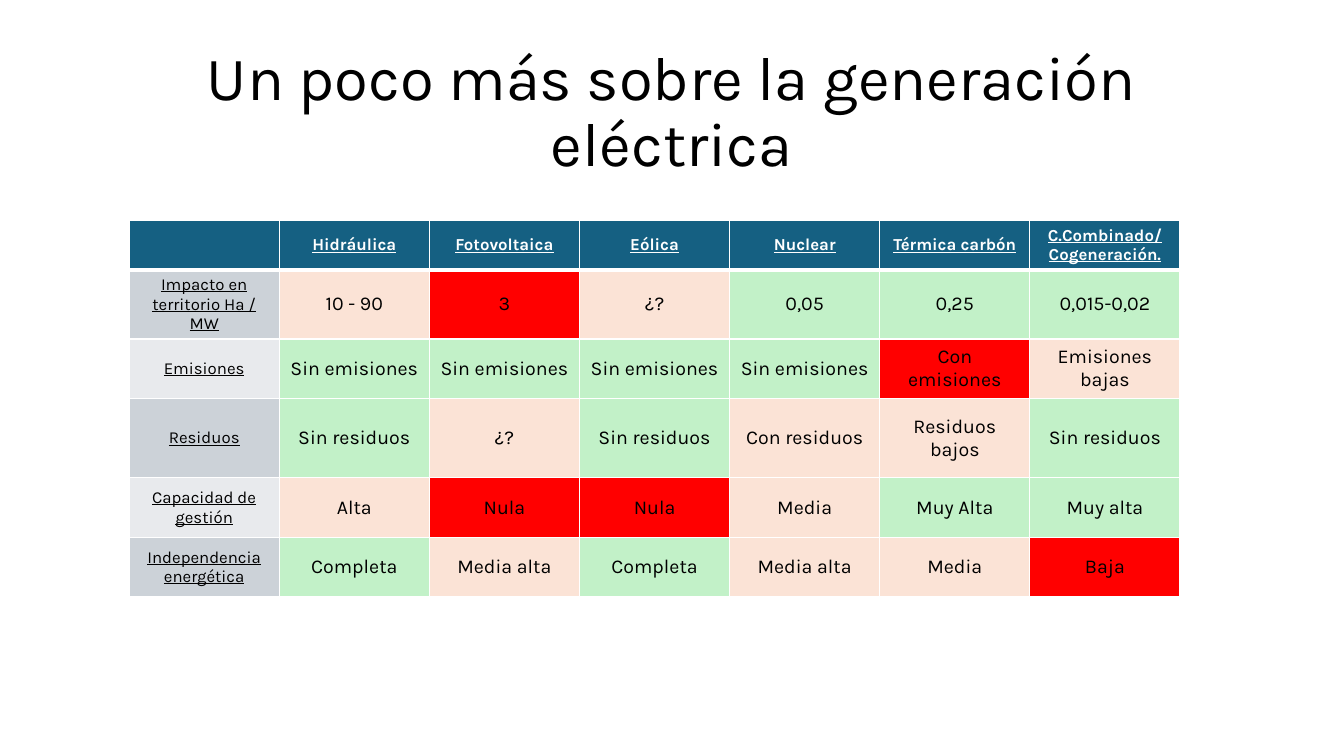
from lxml import etree
from pptx import Presentation
from pptx.dml.color import RGBColor
from pptx.enum import text as t
from pptx.oxml.ns import qn
from pptx.util import Pt

TITLE = "Un poco más sobre la generación eléctrica"
HEADS = ["", "Hidráulica", "Fotovoltaica", "Eólica", "Nuclear",
         "Térmica carbón", "C.Combinado/\nCogeneración."]
# Each value carries its rating: g good, m middling, b bad
ROWS = [
    ("Impacto en territorio Ha / MW",
     [("10 - 90", "m"), ("3", "b"), ("¿?", "m"), ("0,05", "g"),
      ("0,25", "g"), ("0,015-0,02", "g")]),
    ("Emisiones",
     [("Sin emisiones", "g")] * 4
     + [("Con emisiones", "b"), ("Emisiones bajas", "m")]),
    ("Residuos",
     [("Sin residuos", "g"), ("¿?", "m"), ("Sin residuos", "g"),
      ("Con residuos", "m"), ("Residuos bajos", "m"), ("Sin residuos", "g")]),
    ("Capacidad de gestión",
     [("Alta", "m"), ("Nula", "b"), ("Nula", "b"), ("Media", "m"),
      ("Muy Alta", "g"), ("Muy alta", "g")]),
    ("Independencia energética",
     [("Completa", "g"), ("Media alta", "m"), ("Completa", "g"),
      ("Media alta", "m"), ("Media", "m"), ("Baja", "b")]),
]
RATING = {"g": "C2F1C8", "m": "FBE3D6", "b": "FF0000"}
BANDS = ["CCD2D8", "E8EAED"]
BLUE, WHITE, BLACK = "156082", "FFFFFF", "000000"
LEFT, TOP, COL = 92.25, 157.5, 107.25
HEIGHTS = [34.5, 49.25, 42.75, 56.25, 43, 42.25]


def color(code):
    return RGBColor.from_string(code)


def write(frame, words, size, ink=BLACK, bold=False, under=False, space=None):
    frame.text = words
    for para in frame.paragraphs:
        para.alignment = t.PP_ALIGN.CENTER
        para.line_spacing = space
        font = para.font
        for run in para.runs:
            font = run.font
            font.name, font.size = "Karla", Pt(size)
            font.bold, font.underline = bold, under
            font.color.rgb = color(ink)


def border(cell, widths):
    """Draw white left, right, top and bottom edges, widths in points."""
    props = cell._tc.get_or_add_tcPr()
    for place, (side, width) in enumerate(zip("LRTB", widths)):
        line = etree.Element(qn("a:ln" + side), w=str(Pt(width)))
        fill = etree.SubElement(line, qn("a:solidFill"))
        etree.SubElement(fill, qn("a:srgbClr"), val=WHITE)
        props.insert(place, line)


def put(cell, words, size, fill, edges=(1, 1, 1, 1), **style):
    cell.vertical_anchor = t.MSO_ANCHOR.MIDDLE
    cell.fill.solid()
    cell.fill.fore_color.rgb = color(fill)
    border(cell, edges)
    write(cell.text_frame, words, size, **style)


def main():
    deck = Presentation()
    deck.slide_width, deck.slide_height = Pt(960), Pt(540)
    slide = deck.slides.add_slide(deck.slide_layouts[5])

    title = slide.shapes.title
    title.left, title.top = Pt(66), Pt(28.75)
    title.width, title.height = Pt(828), Pt(104.5)
    frame = title.text_frame
    frame.auto_size = t.MSO_AUTO_SIZE.NONE
    frame.vertical_anchor = t.MSO_ANCHOR.MIDDLE
    write(frame, TITLE, 44, space=0.9)

    table = slide.shapes.add_table(
        len(HEIGHTS), len(HEADS), Pt(LEFT), Pt(TOP),
        Pt(COL * len(HEADS)), Pt(sum(HEIGHTS))).table
    for col in table.columns:
        col.width = Pt(COL)
    for row, height in zip(table.rows, HEIGHTS):
        row.height = Pt(height)

    for c, head in enumerate(HEADS):
        put(table.cell(0, c), head, 12, BLUE, (1, 1, 1, 3),
            ink=WHITE, bold=True, under=True)
    for r, (label, values) in enumerate(ROWS, 1):
        edges = (1, 1, 3 if r == 1 else 1, 1)
        put(table.cell(r, 0), label, 12, BANDS[(r - 1) % 2], edges, under=True)
        for c, (value, rate) in enumerate(values, 1):
            put(table.cell(r, c), value, 14, RATING[rate], edges)

    deck.save("out.pptx")


if __name__ == "__main__":
    main()
